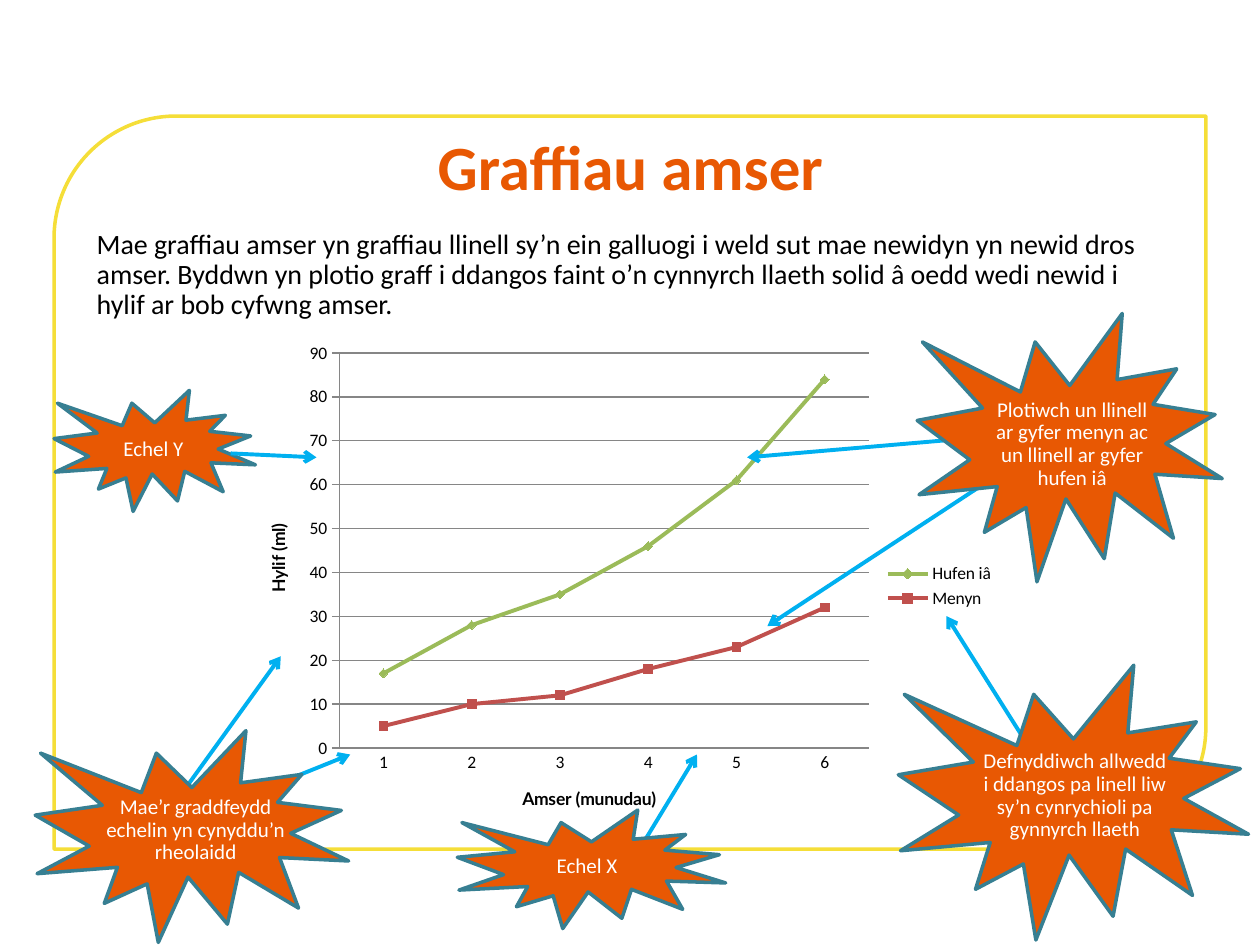
from lxml import etree
from pptx import Presentation
from pptx import util as u
from pptx.chart.data import CategoryChartData
from pptx.dml.color import RGBColor
from pptx.enum import chart as ch, shapes, text
from pptx.oxml import parse_xml
from pptx.oxml.ns import nsdecls, qn

ORANGE, TEAL, YELLOW, BLUE = "E85803", "377F92", "F5DE38", "00B0F0"
WHITE, BLACK, GREY = "FFFFFF", "000000", "868686"


def rgb(value):
    return RGBColor.from_string(value)


def style_font(font, size, color=BLACK, bold=False, name="Calibri"):
    font.size, font.bold, font.name = u.Pt(size), bold, name
    font.color.rgb = rgb(color)


def style_line(line, color, width):
    line.color.rgb = rgb(color)
    line.width = u.Pt(width)


def write(tf, words, align=text.PP_ALIGN.LEFT, anchor=text.MSO_ANCHOR.TOP,
          spacing=0.9, **font):
    tf.word_wrap = True
    tf.auto_size = text.MSO_AUTO_SIZE.NONE
    tf.vertical_anchor = anchor
    p = tf.paragraphs[0]
    p.alignment, p.line_spacing = align, spacing
    r = p.add_run()
    r.text = words
    style_font(r.font, **font)


class Slide:
    """The current slide and its style."""

    def __init__(self, prs):
        self.s = prs.slides.add_slide(prs.slide_layouts[5])

    def title(self, words, box):
        sp = self.s.shapes.title
        sp.left, sp.top, sp.width, sp.height = map(u.Cm, box)
        write(sp.text_frame, words, text.PP_ALIGN.CENTER, text.MSO_ANCHOR.MIDDLE,
              spacing=1, size=36, color=ORANGE, bold=True)

    def shape(self, kind, box, fill, line):
        sp = self.s.shapes.add_shape(kind, *map(u.Cm, box))
        sp.shadow.inherit = False
        sp.fill.solid()
        sp.fill.fore_color.rgb = rgb(fill)
        style_line(sp.line, line, 2)
        return sp

    def frame(self, box):
        sp = self.shape(shapes.MSO_SHAPE.ROUND_2_DIAG_RECTANGLE, box, WHITE, YELLOW)
        self.s.shapes.title.element.addprevious(sp.element)

    def textbox(self, words, box, **fmt):
        sp = self.s.shapes.add_textbox(*map(u.Cm, box))
        write(sp.text_frame, words, **fmt)

    def arrow(self, *ends):
        c = self.s.shapes.add_connector(shapes.MSO_CONNECTOR.STRAIGHT, *map(u.Cm, ends))
        style_line(c.line, BLUE, 2.25)
        etree.SubElement(c.line._get_or_add_ln(), qn("a:tailEnd"), type="arrow")
        etree.SubElement(c.element.spPr, qn("a:effectLst"))

    def callout(self, words, star, label):
        self.shape(shapes.MSO_SHAPE.EXPLOSION1, star, ORANGE, TEAL)
        self.textbox(words, label, align=text.PP_ALIGN.CENTER, size=12, color=WHITE)

    def line_chart(self, box, cats, series, plot):
        data = CategoryChartData()
        data.categories = cats
        for name, values, *_ in series:
            data.add_series(name, values)
        chart = self.s.shapes.add_chart(ch.XL_CHART_TYPE.LINE_MARKERS_STACKED,
                                        *map(u.Cm, box), data).chart
        style_font(chart.font, 10)
        chart.has_title = False
        chart.has_legend = True
        chart.legend.position = ch.XL_LEGEND_POSITION.RIGHT
        chart.legend.include_in_layout = False
        chart.plots[0].vary_by_categories = False

        # Series
        for ser, (_, _, color, marker) in zip(chart.plots[0].series, series):
            ser.smooth = False
            style_line(ser.format.line, color, 2.25)
            ser.marker.style, ser.marker.size = marker, 5
            ser.marker.format.fill.solid()
            ser.marker.format.fill.fore_color.rgb = rgb(color)
            ser.marker.format.line.color.rgb = rgb(color)

        # Axes
        ticks = ch.XL_TICK_MARK
        for axis, name, tick in ((chart.category_axis, "Amser (munudau)", ticks.NONE),
                                 (chart.value_axis, "Hylif (ml)", ticks.OUTSIDE)):
            axis.major_tick_mark, axis.minor_tick_mark = tick, ticks.NONE
            style_line(axis.format.line, GREY, 0.75)
            p = axis.axis_title.text_frame.paragraphs[0]
            r = p.add_run()
            r.text = name
            style_font(r.font, 10, bold=True, name="Lato")
        axis = chart.value_axis
        axis.minimum_scale, axis.maximum_scale, axis.major_unit = 0, 90, 10
        style_line(axis.major_gridlines.format.line, GREY, 0.75)

        # Inner plot area, as shares of the chart
        area = chart.plots[0]._element.getparent()
        for old in area.findall(qn("c:layout")):
            area.remove(old)
        places = "".join(f'<c:{k} val="{v}"/>' for k, v in zip("xywh", plot))
        area.insert(0, parse_xml(
            f'<c:layout {nsdecls("c")}><c:manualLayout><c:layoutTarget val="inner"/>'
            f'<c:xMode val="edge"/><c:yMode val="edge"/>{places}'
            '</c:manualLayout></c:layout>'))


def main():
    prs = Presentation()
    prs.slide_width, prs.slide_height = u.Cm(25.4), u.Cm(19.05)
    s = Slide(prs)

    # Frame, title and introduction
    s.frame((1.09, 2.34, 23.22, 14.78))
    s.title("Graffiau amser", (3.71, 2.34, 18, 2))
    s.textbox("Mae graffiau amser yn graffiau llinell sy’n ein galluogi i weld sut mae "
              "newidyn yn newid dros amser. Byddwn yn plotio graff i ddangos faint o’n "
              "cynnyrch llaeth solid â oedd wedi newid i hylif ar bob cyfwng amser.",
              (1.7, 4.52, 22, 2), size=16)

    # Time graph
    marker = ch.XL_MARKER_STYLE
    s.line_chart((4.83, 6.71, 15.47, 10.21), ["1", "2", "3", "4", "5", "6"],
                 [("Menyn", (5, 10, 12, 18, 23, 32), "C0504D", marker.SQUARE),
                  ("Hufen iâ", (12, 18, 23, 28, 38, 52), "9BBB59", marker.DIAMOND)],
                 plot=(0.13, 0.04, 0.69, 0.78))

    # Arrows that start behind their callouts
    for ends in ((3.66, 16, 5.66, 13.23), (4.65, 16.18, 7.06, 15.21),
                 (20.65, 8.74, 15.06, 9.22), (20.65, 9.22, 15.47, 12.62),
                 (12.55, 17.68, 14.05, 15.21), (20.65, 14.91, 19.08, 12.42)):
        s.arrow(*ends)

    # Callouts: words, star, label
    for callout in (
            ("Mae’r graddfeydd echelin yn cynyddu’n rheolaidd",
             (0.71, 14.73, 6.32, 4.27), (1.8, 15.93, 4.29, 1.65)),
            ("Plotiwch un llinell ar gyfer menyn ac un llinell ar gyfer hufen iâ",
             (18.49, 6.32, 6.15, 5.41), (19.71, 7.92, 3.81, 2.11)),
            ("Echel Y", (1.09, 7.87, 4.06, 2.44), (1.19, 8.71, 3.81, 0.71)),
            ("Echel X", (9.22, 16.33, 5.41, 2.39), (9.09, 17.12, 5.49, 0.71)),
            ("Defnyddiwch allwedd i ddangos pa linell liw sy’n cynrychioli pa "
             "gynnyrch llaeth",
             (18.11, 13.41, 7.06, 5.54), (19.51, 15.01, 4.32, 2.11))):
        s.callout(*callout)

    # Y axis arrow lies over its callout
    s.arrow(4.65, 9.14, 6.38, 9.22)

    prs.save("out.pptx")


if __name__ == "__main__":
    main()
